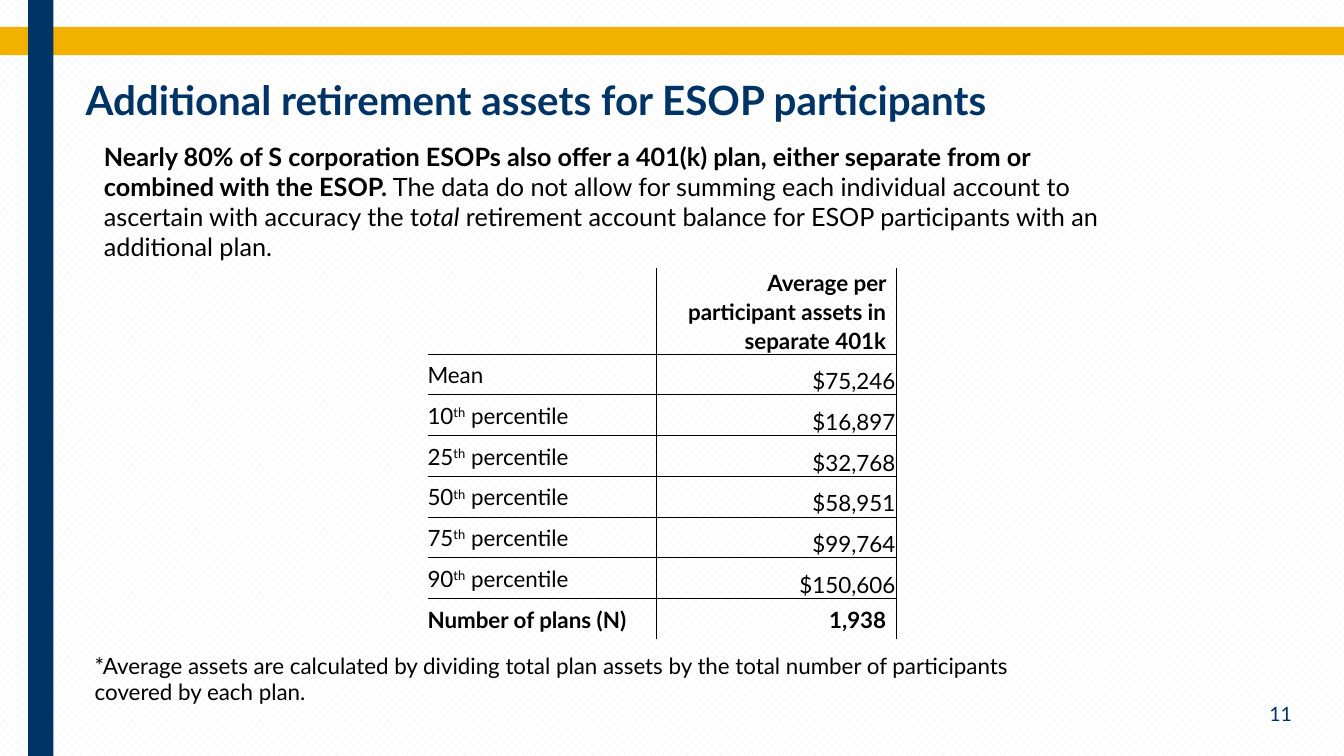
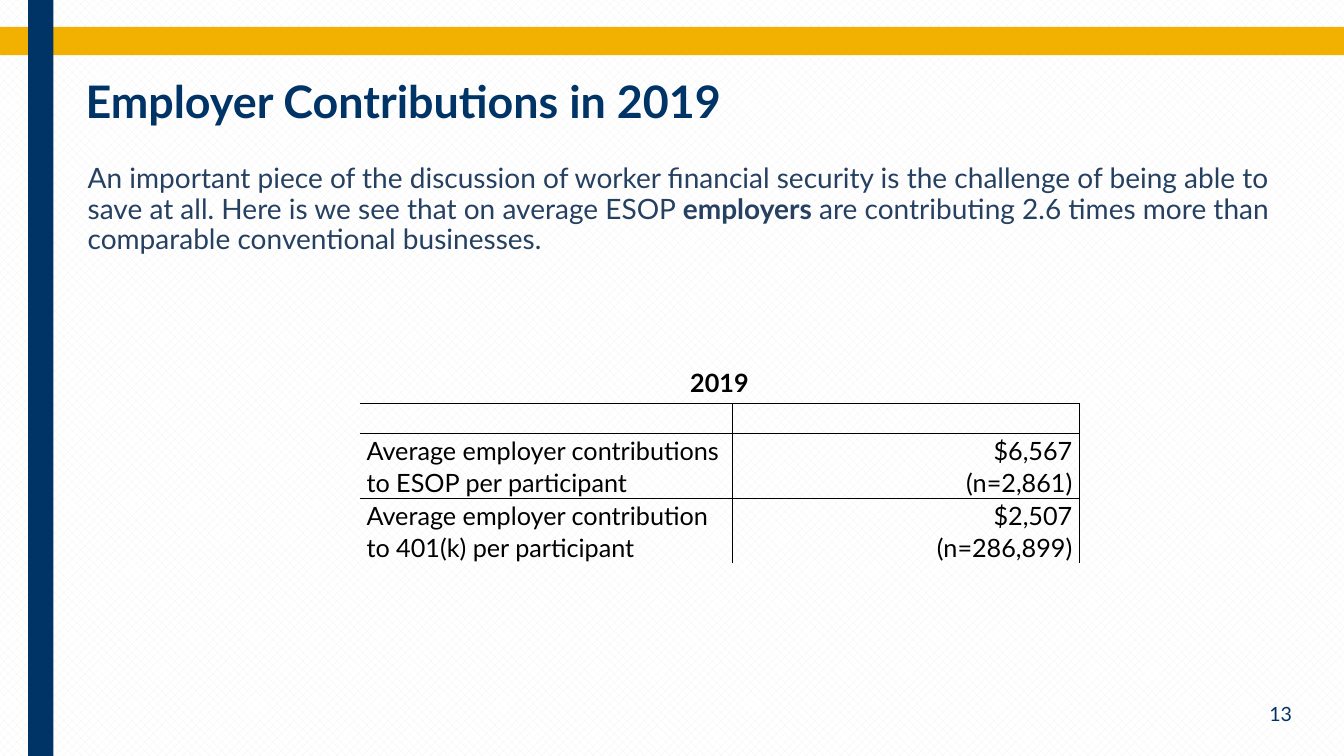
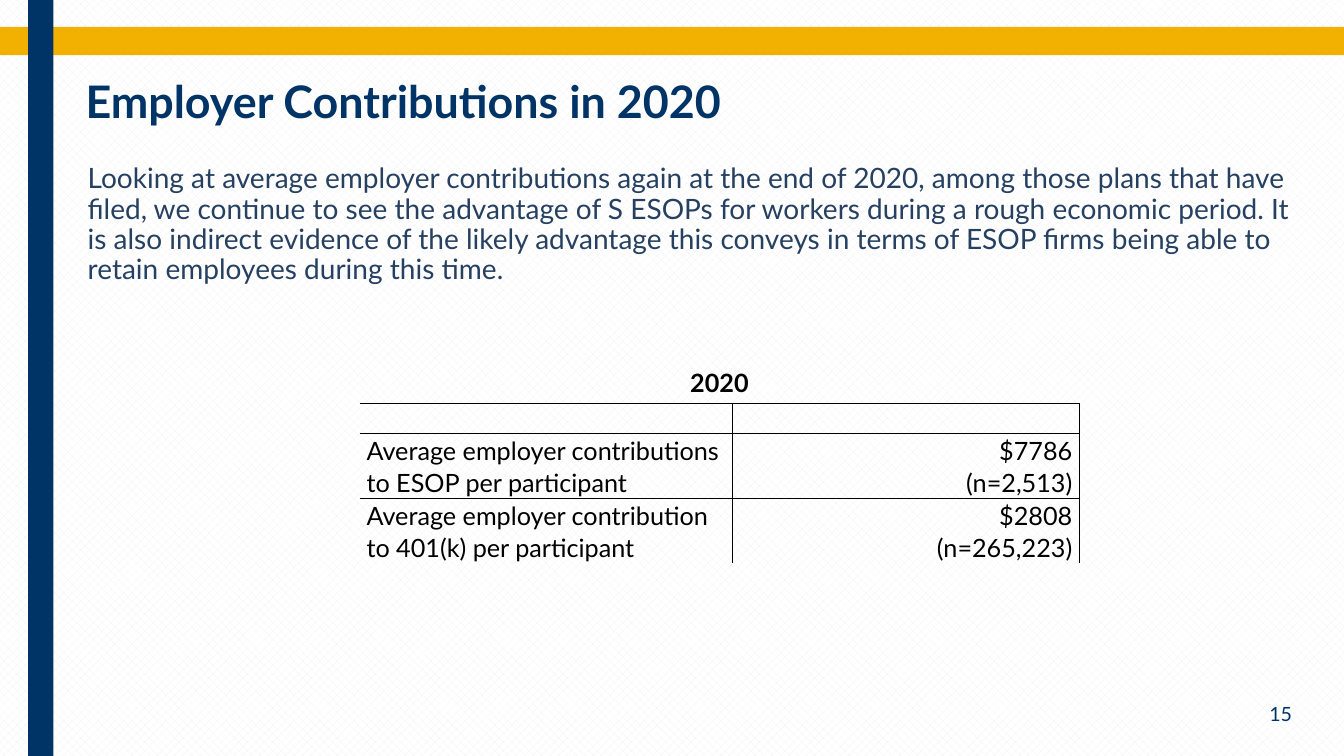
"""Build three slides on ESOP retirement assets and employer contributions."""
from lxml import etree
from pptx import Presentation
from pptx import util as u
from pptx.dml import color
from pptx.enum import dml, shapes, text
from pptx.oxml import ns

COLOURS = {"gold": "F2B100", "navy": "003366", "slate": "254061",
           "black": "000000", "hatch": "F2F2F2", "white": "FFFFFF"}
RGB = {name: color.RGBColor.from_string(code) for name, code in COLOURS.items()}
FONT = "Lato"
PLAIN_TABLE = "{2D5ABB26-0587-4C30-8999-92F81FD0307C}"
LEFT, CENTER, RIGHT = text.PP_ALIGN.LEFT, text.PP_ALIGN.CENTER, text.PP_ALIGN.RIGHT
TOP, MIDDLE, BOTTOM = text.MSO_ANCHOR.TOP, text.MSO_ANCHOR.MIDDLE, text.MSO_ANCHOR.BOTTOM

presentation = Presentation()
presentation.slide_width, presentation.slide_height = u.Inches(13.33), u.Inches(7.5)
COLUMN = presentation.slide_width / 160
ROW = presentation.slide_height / 90

BOXES = {
    "title": dict(at=(9, 9, 126, 8.5), colour="navy", spacing=0.89),
    "number": dict(at=(134, 82.3, 21, 5.3), size=14, colour="navy", align=RIGHT, anchor=MIDDLE),
    "intro": dict(at=(11.2, 16.2, 121.6, 15.7), size=18),
    "note": dict(at=(10.1, 77, 118.8, 7.7), size=16),
    "body": dict(at=(9.84, 19, 145.2, 63), size=20, colour="slate", spacing=0.9,
                 insets=(0.05, 0.05, 0.05, 0.05)),
}
CELLS = {
    "empty": dict(insets=(0, 0, 0, 0)),
    "heading": dict(align=RIGHT, insets=(0, 0, 0.1, 0), spacing=1.07),
    "label": dict(anchor=MIDDLE, insets=(0, 0, 0.1, 0), spacing=1.07),
    "amount": dict(align=RIGHT, anchor=BOTTOM, insets=(0.01, 0.01, 0.01, 0)),
    "total": dict(align=RIGHT, anchor=MIDDLE, insets=(0, 0, 0.1, 0), spacing=1.07),
    "year": dict(align=CENTER, insets=(0.1, 0.05, 0.1, 0.05)),
    "item": dict(insets=(0.07, 0, 0.07, 0), spacing=1.07),
    "average": dict(align=RIGHT, anchor=MIDDLE, insets=(0.07, 0, 0.07, 0), spacing=1.07),
}


def write_text(holder, paragraphs, size, colour="black", align=LEFT, anchor=TOP,
               spacing=1.0, insets=(0.1, 0.05, 0.1, 0.05)):
    """Fill a text frame or cell; each paragraph is a list of (words, style) runs."""
    holder.margin_left, holder.margin_top, holder.margin_right, holder.margin_bottom = map(u.Inches, insets)
    holder.vertical_anchor = anchor
    frame = getattr(holder, "text_frame", holder)
    frame.word_wrap = True
    for index, runs in enumerate(paragraphs):
        paragraph = frame.add_paragraph() if index else frame.paragraphs[0]
        paragraph.alignment, paragraph.line_spacing = align, spacing
        for words, style in runs:
            run = paragraph.add_run()
            run.text = words
            run.font.name, run.font.size = FONT, u.Pt(size)
            run.font.color.rgb = RGB[colour]
            run.font.bold, run.font.italic = style == "bold", style == "italic"
            if style == "super":
                run.font._element.set("baseline", "30000")


def add_ruled_table(slide, left, top, widths, heights, rows, size):
    """Add a table with thin rules; a row of one cell spans all columns."""
    shape = slide.shapes.add_table(len(heights), len(widths), int(left * COLUMN), int(top * ROW),
                                   int(sum(widths) * COLUMN), int(sum(heights) * ROW))
    table = shape.table
    table.first_row = table.horz_banding = False
    table._tbl.tblPr.find(ns.qn("a:tableStyleId")).text = PLAIN_TABLE
    for column, width in zip(table.columns, widths):
        column.width = int(width * COLUMN)
    for table_row, height in zip(table.rows, heights):
        table_row.height = int(height * ROW)
    for row, cells in enumerate(rows):
        if len(cells) == 1:
            table.cell(row, 0).merge(table.cell(row, len(widths) - 1))
        for column, (kind, paragraphs) in enumerate(cells):
            write_text(table.cell(row, column), paragraphs, size, **CELLS[kind])
        for column in range(len(widths)):
            cell = table.cell(row, column)
            spanning = len(cells) == 1
            sides = {"lnL": column > 0 and not spanning, "lnR": not spanning,
                     "lnT": row > 0, "lnB": row < len(rows) - 1}
            for side in [name for name, drawn in sides.items() if drawn]:
                line = etree.SubElement(cell._tc.get_or_add_tcPr(), ns.qn("a:" + side), w=str(u.Pt(0.25)))
                fill = etree.SubElement(line, ns.qn("a:solidFill"))
                etree.SubElement(fill, ns.qn("a:srgbClr"), val=COLOURS["black"])
            cell.fill.background()


percentile_rows = [
    [("label", [[(rank, ""), ("th", "super"), (" percentile", "")]]), ("amount", [[(amount, "")]])]
    for rank, amount in [("10", "$16,897"), ("25", "$32,768"), ("50", "$58,951"),
                         ("75", "$99,764"), ("90", "$150,606")]]
asset_rows = [
    [("empty", []), ("heading", [[("Average per participant assets in separate 401k", "bold")]])],
    [("label", [[("Mean", "")]]), ("amount", [[("$75,246", "")]])],
    *percentile_rows,
    [("label", [[("Number of plans (N)", "bold")]]), ("total", [[("1,938", "bold")]])],
]
asset_table = dict(left=50.9, top=31.9, widths=[27.2, 28.6], heights=[10.2] + [4.85] * 7,
                   rows=asset_rows, size=16)

contribution_tables = []
for year, esop, plan in [("2019", ("$6,567", "(n=2,861)"), ("$2,507", "(n=286,899)")),
                         ("2020", ("$7786", "(n=2,513)"), ("$2808", "(n=265,223)"))]:
    contribution_rows = [[("year", [[(year, "bold")]])], [("empty", []), ("empty", [])]]
    for label, values in [("Average employer contributions to ESOP per participant", esop),
                          ("Average employer contribution to 401(k) per participant", plan)]:
        contribution_rows.append([("item", [[(label, "")]]),
                                  ("average", [[(value, "")] for value in values])])
    contribution_tables.append(dict(left=42.8, top=43.2, widths=[44.4, 41.3],
                                    heights=[4.8, 3.6, 7.7, 7.7], rows=contribution_rows, size=18))

slides = [
    ("Additional retirement assets for ESOP participants", 28.8, "11", asset_table, {
        "note": [("*Average assets are calculated by dividing total plan assets by the total number of "
                  "participants covered by each plan.", "")],
        "intro": [("Nearly 80% of S corporation ESOPs also offer a 401(k) plan, either separate from or "
                   "combined with the ESOP.", "bold"),
                  (" The data do not allow for summing each individual account to ascertain with "
                   "accuracy the t", ""),
                  ("otal", "italic"),
                  (" retirement account balance for ESOP participants with an additional plan.", "")]}),
    ("Employer Contributions in 2019", 32, "13", contribution_tables[0], {
        "body": [("An important piece of the discussion of worker financial security is the challenge of "
                  "being able to save at all. Here is we see that on average ESOP ", ""),
                 ("employers", "bold"),
                 (" are contributing 2.6 times more than comparable conventional businesses.", "")]}),
    ("Employer Contributions in 2020", 32, "15", contribution_tables[1], {
        "body": [("Looking at average employer contributions again at the end of 2020, among those plans "
                  "that have filed, we continue to see the advantage of S ESOPs for workers during a rough "
                  "economic period. It is also indirect evidence of the likely advantage this conveys in "
                  "terms of ESOP firms being able to retain employees during this time.", "")]}),
]

backdrop = presentation.slide_master.background.fill
backdrop.patterned()
backdrop.pattern = dml.MSO_PATTERN.from_xml("pct40")
backdrop.fore_color.rgb, backdrop.back_color.rgb = RGB["hatch"], RGB["white"]

for title, title_size, number, table, texts in slides:
    slide = presentation.slides.add_slide(presentation.slide_layouts[6])
    for colour, (left, top, width, height) in [("gold", (0, 3.2, 160, 3.36)), ("navy", (3.36, 0, 3, 90))]:
        band = slide.shapes.add_shape(shapes.MSO_SHAPE.RECTANGLE, int(left * COLUMN), int(top * ROW),
                                      int(width * COLUMN), int(height * ROW))
        band.shadow.inherit = False
        band.fill.solid()
        band.fill.fore_color.rgb = RGB[colour]
        band.line.fill.background()
    add_ruled_table(slide, **table)
    for name, runs in {"title": [(title, "bold")], "number": [(number, "")], **texts}.items():
        style = {"size": title_size, **BOXES[name]}
        left, top, width, height = style.pop("at")
        box = slide.shapes.add_textbox(int(left * COLUMN), int(top * ROW),
                                       int(width * COLUMN), int(height * ROW))
        write_text(box.text_frame, [runs], **style)

presentation.save("out.pptx")
